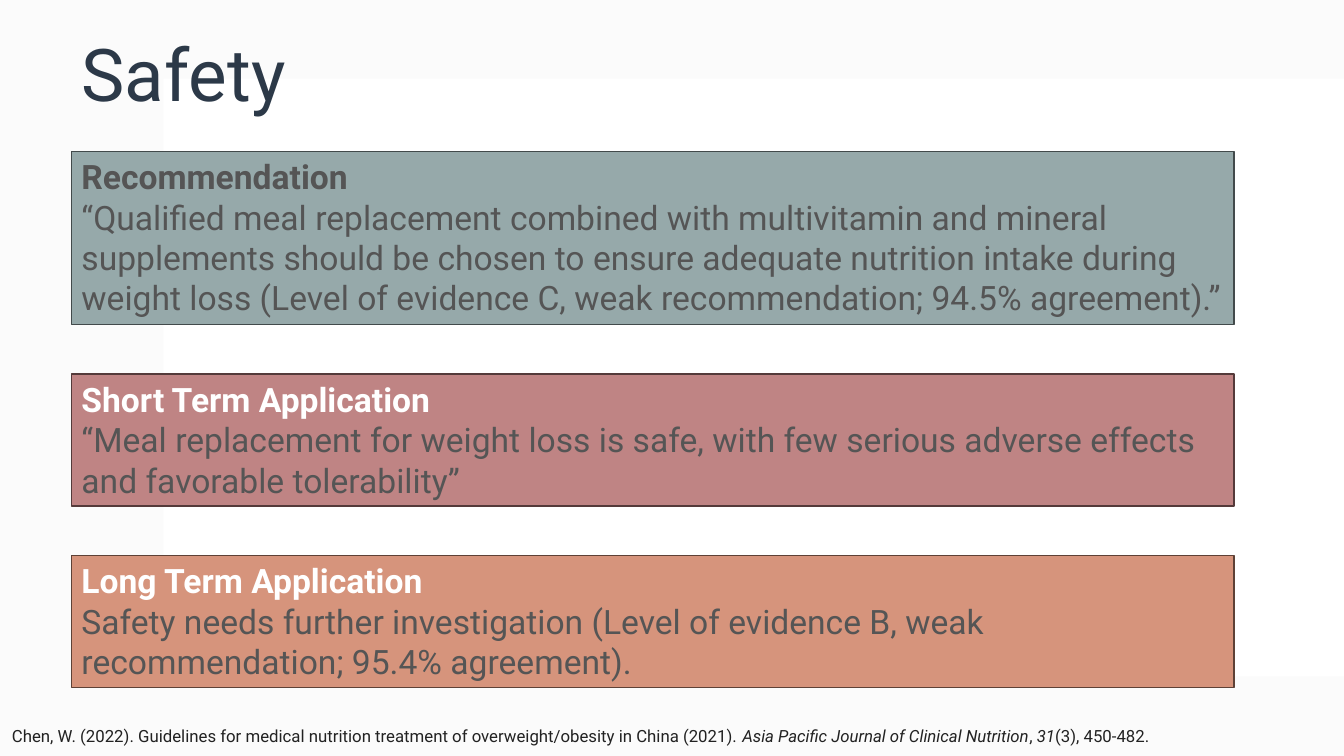
from pptx import Presentation
from pptx.dml.color import RGBColor
from pptx.enum.shapes import MSO_SHAPE
from pptx.enum.text import MSO_ANCHOR, PP_ALIGN
from pptx.util import Inches, Pt

FONT = "Roboto"
COLORS = {
    "backdrop": "FBFBFB", "white": "FFFFFF", "title": "2C3948",
    "body": "555555", "citation": "222222",
    "sage": "96A9AA", "sage_line": "424A4B",
    "rose": "BF8484", "rose_line": "543A3A",
    "clay": "D6947C", "clay_line": "5E4136",
}
LEFT, WIDTH = 0.71, 11.53
CARD_TOP, CARD_GAP = 1.5, 0.49

# Heading, heading colour, statement, fill, height
CARDS = [
    ("Recommendation", "body",
     "“Qualified meal replacement combined with multivitamin and mineral "
     "supplements should be chosen to ensure adequate nutrition intake during "
     "weight loss (Level of evidence C, weak recommendation; 94.5% agreement).”",
     "sage", 1.72),
    ("Short Term Application", "white",
     "“Meal replacement for weight loss is safe, with few serious adverse "
     "effects and favorable tolerability”",
     "rose", 1.31),
    ("Long Term Application", "white",
     "Safety needs further investigation (Level of evidence B, weak "
     "recommendation; 95.4% agreement).",
     "clay", 1.31),
]

# Citation text and whether it is italic
CITATION = [
    ("Chen, W. (2022). Guidelines for medical nutrition treatment of "
     "overweight/obesity in China (2021). ", False),
    ("Asia Pacific Journal of Clinical Nutrition", True),
    (", ", False),
    ("31", True),
    ("(3), 450-482.", False),
]


def rgb(name):
    return RGBColor.from_string(COLORS[name])


def add_span(para, text, size=24, color="body", bold=False, italic=False):
    span = para.add_run()
    span.text = text
    font = span.font
    font.name, font.size = FONT, Pt(size)
    font.bold, font.italic = bold, italic
    font.color.rgb = rgb(color)


def add_panel(page, left, top, width, height, fill, line=None):
    panel = page.shapes.add_shape(MSO_SHAPE.RECTANGLE, Inches(left), Inches(top),
                                  Inches(width), Inches(height))
    panel.shadow.inherit = False
    panel.fill.solid()
    panel.fill.fore_color.rgb = rgb(fill)
    if line:
        panel.line.color.rgb = rgb(line)
        panel.line.width = Pt(1)
    else:
        panel.line.fill.background()
    return panel


def add_text_box(page, left, top, width, height, anchor=MSO_ANCHOR.TOP):
    box = page.shapes.add_textbox(Inches(left), Inches(top),
                                  Inches(width), Inches(height))
    box.text_frame.word_wrap = True
    box.text_frame.vertical_anchor = anchor
    return box.text_frame.paragraphs[0]


def add_card(page, top, heading, heading_color, statement, fill, height):
    card = add_panel(page, LEFT, top, WIDTH, height, fill, line=f"{fill}_line")
    frame = card.text_frame
    frame.word_wrap = True
    frame.vertical_anchor = MSO_ANCHOR.TOP
    add_span(frame.paragraphs[0], heading, color=heading_color, bold=True)
    add_span(frame.add_paragraph(), statement)
    for para in frame.paragraphs:
        para.alignment = PP_ALIGN.LEFT


def main():
    deck = Presentation()
    deck.slide_width, deck.slide_height = Inches(13.33), Inches(7.5)
    page = deck.slides.add_slide(deck.slide_layouts[6])

    # Background
    add_panel(page, 0, 0, 13.33, 7.5, "backdrop")
    add_panel(page, 1.62, 0.78, 11.71, 5.93, "white")

    # Title
    title = add_text_box(page, LEFT, 0.05, WIDTH, 1.45, anchor=MSO_ANCHOR.MIDDLE)
    title.line_spacing = 0.9
    add_span(title, "Safety", size=52, color="title")

    # Evidence cards, stacked with equal gaps
    top = CARD_TOP
    for heading, heading_color, statement, fill, height in CARDS:
        add_card(page, top, heading, heading_color, statement, fill, height)
        top += height + CARD_GAP

    # Citation
    citation = add_text_box(page, 0.02, 7.15, 12.92, 0.3)
    for text, italic in CITATION:
        add_span(citation, text, size=12, color="citation", italic=italic)

    deck.save("out.pptx")


if __name__ == "__main__":
    main()
